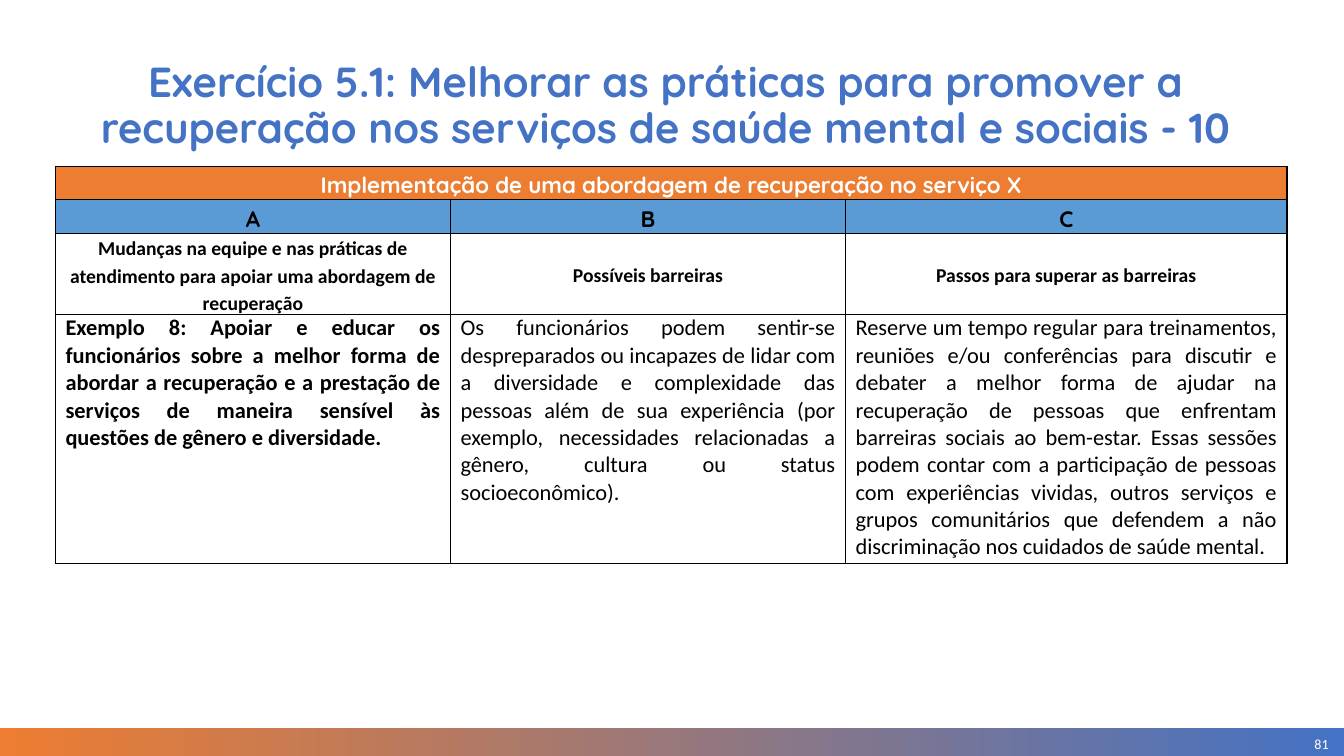
from dataclasses import dataclass

from lxml import etree
from pptx import Presentation
from pptx.dml.color import RGBColor
from pptx.enum.shapes import MSO_SHAPE
from pptx.enum.text import MSO_ANCHOR, MSO_AUTO_SIZE, PP_ALIGN
from pptx.oxml.ns import qn
from pptx.util import Pt

RECT = MSO_SHAPE.RECTANGLE
TOP, MIDDLE = MSO_ANCHOR.TOP, MSO_ANCHOR.MIDDLE
CENTER, RIGHT, JUSTIFY = PP_ALIGN.CENTER, PP_ALIGN.RIGHT, PP_ALIGN.JUSTIFY
NO_AUTOFIT = MSO_AUTO_SIZE.NONE
TITLE_ONLY = 5


@dataclass(frozen=True)
class Theme:
    blue: str = "4472C4"
    orange: str = "ED7D31"
    light_blue: str = "5B9BD5"
    white: str = "FFFFFF"
    black: str = "000000"
    heading_font: str = "Quicksand"
    body_font: str = "Calibri"
    title_size: int = 30
    body_size: int = 16
    label_size: int = 14
    number_size: int = 10


@dataclass(frozen=True)
class RowStyle:
    font: str
    size: int
    color: str
    fill: str = ""
    align: PP_ALIGN = CENTER
    anchor: MSO_ANCHOR = MIDDLE
    spacing: float = 1.15
    margin: float = 7.2


THEME = Theme()
WIDTH, HEIGHT = 960, 540
TITLE = "Exercício 5.1: Melhorar as práticas para promover a recuperação nos serviços de saúde mental e sociais - 10"
COL_WIDTHS = (282.2, 282.2, 315.4)
ROW_HEIGHTS = (24, 24, 57, 178)
ROWS = (
    ("Implementação de uma abordagem de recuperação no serviço X",),
    ("A", "B", "C"),
    ("Mudanças na equipe e nas práticas de atendimento para apoiar uma abordagem de recuperação",
     "Possíveis barreiras",
     "Passos para superar as barreiras"),
    ("Exemplo 8: Apoiar e educar os funcionários sobre a melhor forma de abordar a recuperação "
     "e a prestação de serviços de maneira sensível às questões de gênero e diversidade.",
     "Os funcionários podem sentir-se despreparados ou incapazes de lidar com a diversidade e "
     "complexidade das pessoas além de sua experiência (por exemplo, necessidades relacionadas "
     "a gênero, cultura ou status socioeconômico).",
     "Reserve um tempo regular para treinamentos, reuniões e/ou conferências para discutir e "
     "debater a melhor forma de ajudar na recuperação de pessoas que enfrentam barreiras sociais "
     "ao bem-estar. Essas sessões podem contar com a participação de pessoas com experiências "
     "vividas, outros serviços e grupos comunitários que defendem a não discriminação nos "
     "cuidados de saúde mental."),
)
ROW_STYLES = (
    RowStyle(THEME.heading_font, THEME.body_size, THEME.white, THEME.orange),
    RowStyle(THEME.heading_font, THEME.body_size, THEME.black, THEME.light_blue),
    RowStyle(THEME.body_font, THEME.label_size, THEME.black, margin=6.5),
    RowStyle(THEME.body_font, THEME.body_size, THEME.black,
             align=JUSTIFY, anchor=TOP, spacing=1.0),
)


def rgb(value):
    return RGBColor.from_string(value)


def write(tf, text, font, size, color, align, bold=False, spacing=1.0):
    tf.text = text
    p = tf.paragraphs[0]
    p.alignment, p.line_spacing = align, spacing
    f = p.runs[0].font
    f.name, f.size, f.bold = font, Pt(size), bold
    f.color.rgb = rgb(color)


def set_borders(cell, color):
    tcPr = cell._tc.get_or_add_tcPr()
    for side in ("lnL", "lnR", "lnT", "lnB"):
        ln = etree.SubElement(tcPr, qn(f"a:{side}"), w=str(Pt(1)))
        fill = etree.SubElement(ln, qn("a:solidFill"))
        etree.SubElement(fill, qn("a:srgbClr"), val=color)


def add_title(slide, x, y, w, h):
    sp = slide.shapes.title
    sp.left, sp.top, sp.width, sp.height = Pt(x), Pt(y), Pt(w), Pt(h)
    tf = sp.text_frame
    tf.word_wrap, tf.auto_size, tf.vertical_anchor = True, NO_AUTOFIT, TOP
    write(tf, TITLE, THEME.heading_font, THEME.title_size, THEME.blue, CENTER, True, 0.9)


def add_plan_table(slide, x, y, w, h):
    table = slide.shapes.add_table(len(ROWS), len(COL_WIDTHS), Pt(x), Pt(y), Pt(w), Pt(h)).table
    for col, width in zip(table.columns, COL_WIDTHS):
        col.width = Pt(width)
    for row, height in zip(table.rows, ROW_HEIGHTS):
        row.height = Pt(height)
    table.cell(0, 0).merge(table.cell(0, len(COL_WIDTHS) - 1))

    for i, (texts, style) in enumerate(zip(ROWS, ROW_STYLES)):
        for j in range(len(COL_WIDTHS)):
            cell = table.cell(i, j)
            set_borders(cell, THEME.black)
            if style.fill:
                cell.fill.solid()
                cell.fill.fore_color.rgb = rgb(style.fill)
            else:
                cell.fill.background()
            cell.margin_left = cell.margin_right = Pt(style.margin)
            cell.margin_top = cell.margin_bottom = 0
            cell.vertical_anchor = style.anchor
            if j < len(texts):
                # In the example row only the first column is bold
                bold = i < len(ROWS) - 1 or j == 0
                write(cell.text_frame, texts[j], style.font, style.size, style.color,
                      style.align, bold, style.spacing)


def add_footer(slide, x, y, w, h):
    # Gradient band
    band = slide.shapes.add_shape(RECT, Pt(x), Pt(y), Pt(w), Pt(h))
    band.shadow.inherit = False
    band.line.fill.background()
    band.fill.gradient()
    band.fill.gradient_angle = 0
    for stop, color, position in zip(band.fill.gradient_stops, (THEME.orange, THEME.blue), (0, 1)):
        stop.color.rgb = rgb(color)
        stop.position = position

    # Slide number
    num_w, num_h = 129.6, 17.2
    box = slide.shapes.add_textbox(Pt(x + w - num_w - 11), Pt(y + 2.9), Pt(num_w), Pt(num_h))
    tf = box.text_frame
    tf.word_wrap, tf.vertical_anchor = True, MIDDLE
    tf.margin_left = tf.margin_right = tf.margin_top = tf.margin_bottom = 0
    write(tf, "81", THEME.body_font, THEME.number_size, THEME.white, RIGHT)


def main():
    prs = Presentation()
    prs.slide_width, prs.slide_height = Pt(WIDTH), Pt(HEIGHT)
    slide = prs.slides.add_slide(prs.slide_layouts[TITLE_ONLY])
    add_footer(slide, 0, 520, WIDTH, 20)
    add_plan_table(slide, 39.6, 118.8, sum(COL_WIDTHS), sum(ROW_HEIGHTS))
    add_title(slide, 31, 40.3, 889, 34)
    prs.save("out.pptx")


if __name__ == "__main__":
    main()
